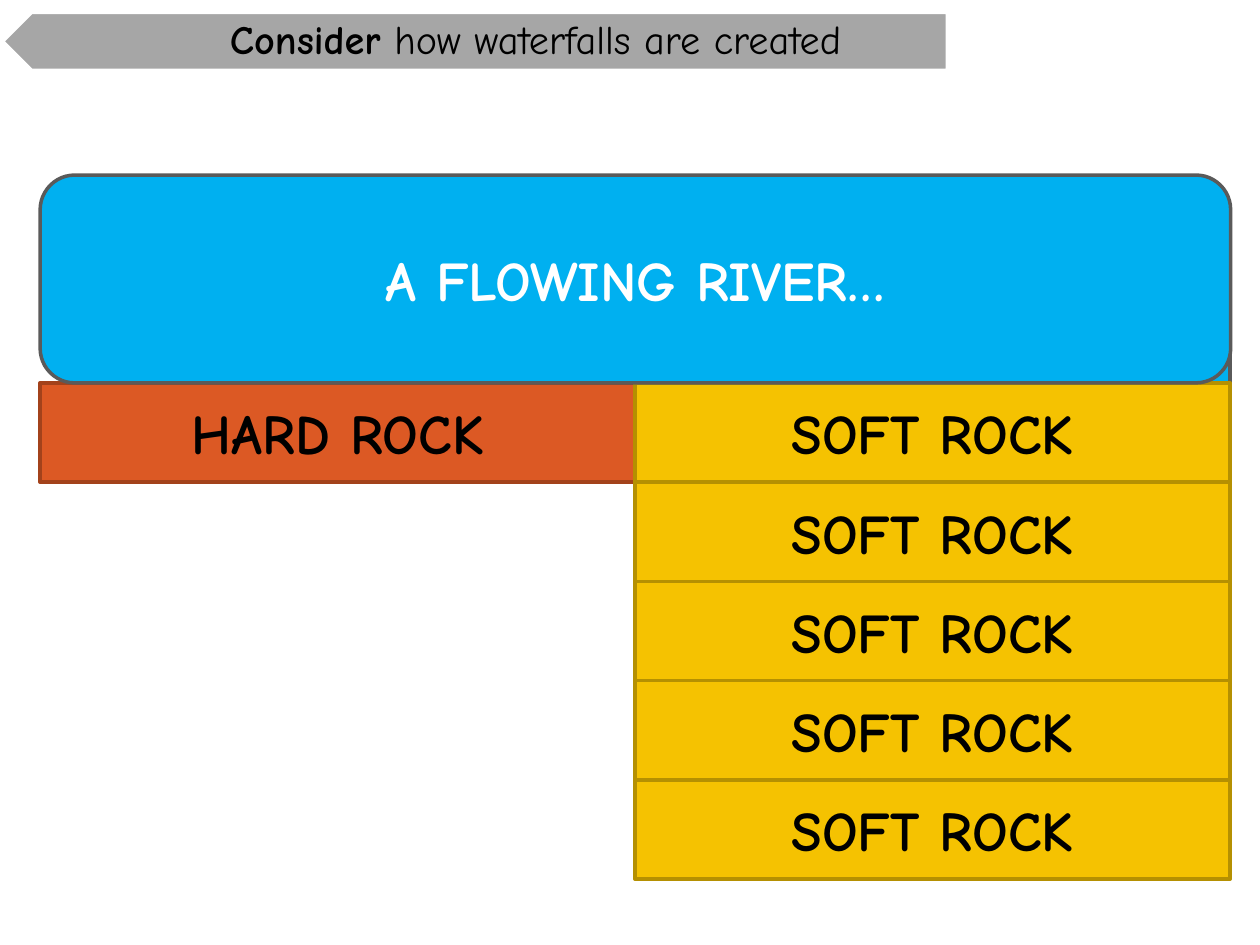
import pptx
import pptx.util
import pptx.dml.color
import pptx.enum.shapes
import pptx.enum.text

Cm = pptx.util.Cm
Pt = pptx.util.Pt
KIND = pptx.enum.shapes.MSO_SHAPE
FONT = "Comic Neue"
HUES = {
    "water": "00B0F0", "edge": "5A5A5A",
    "hard": "DC5924", "hard_edge": "A3421B",
    "soft": "F5C201", "soft_edge": "B59001",
    "band": "A6A6A6", "white": "FFFFFF", "black": "000000",
}
LEFT, MID, TOP = 0.81, 12.8, 7.72
WIDE, HIGH = 12, 2
ROWS = 5


def hue(name):
    """Give the colour that has this name."""
    return pptx.dml.color.RGBColor.from_string(HUES[name])


def add_run(para, text, size, tint, bold):
    """Add one run of text to a paragraph."""
    run = para.add_run()
    run.text = text
    run.font.name = FONT
    run.font.size = Pt(size)
    run.font.bold = bold
    run.font.color.rgb = hue(tint)


def add_block(slide, kind, box, fill, edge, text="", tint="black"):
    """Add a filled, outlined shape with an optional centred label."""
    shape = slide.shapes.add_shape(kind, *map(Cm, box))
    shape.shadow.inherit = False
    shape.fill.solid()
    shape.fill.fore_color.rgb = hue(fill)
    shape.line.color.rgb = hue(edge)
    shape.line.width = Pt(2)
    if text:
        frame = shape.text_frame
        frame.vertical_anchor = pptx.enum.text.MSO_ANCHOR.MIDDLE
        para = frame.paragraphs[0]
        para.alignment = pptx.enum.text.PP_ALIGN.CENTER
        add_run(para, text, 32, tint, True)
    return shape


def add_title(slide):
    """Place the title on its arrow band."""
    band = add_block(slide, KIND.PENTAGON, (0.05, 0.25, 19.05, 1.17),
                     "band", "white")
    band.rotation = 180
    title = slide.shapes.title
    title.left, title.top, title.width, title.height = map(
        Cm, (1.22, 0.25, 17.88, 1.17))
    band.element.addnext(title.element)
    frame = title.text_frame
    frame.word_wrap = True
    frame.auto_size = pptx.enum.text.MSO_AUTO_SIZE.NONE
    frame.vertical_anchor = pptx.enum.text.MSO_ANCHOR.MIDDLE
    frame.margin_left, frame.margin_right = Cm(1.75), Cm(0.46)
    frame.margin_top = frame.margin_bottom = Cm(0.25)
    para = frame.paragraphs[0]
    para.alignment = pptx.enum.text.PP_ALIGN.CENTER
    para.line_spacing = 0.9
    para.space_before = Pt(0)
    add_run(para, "Consider", 23, "black", True)
    add_run(para, " how waterfalls are created", 23, "black", False)


def main():
    """Build the waterfall slide and save it."""
    deck = pptx.Presentation()
    deck.slide_width, deck.slide_height = Cm(25.4), Cm(19.05)
    slide = deck.slides.add_slide(deck.slide_layouts[5])
    add_block(slide, KIND.RECTANGLE, (MID, 7.14, WIDE, 8.61),
              "water", "edge")
    add_block(slide, KIND.RECTANGLE, (LEFT, TOP, WIDE, HIGH),
              "hard", "hard_edge", "HARD ROCK")
    for row in range(ROWS):
        add_block(slide, KIND.RECTANGLE, (MID, TOP + row * HIGH, WIDE, HIGH),
                  "soft", "soft_edge", "SOFT ROCK")
    add_block(slide, KIND.ROUNDED_RECTANGLE, (LEFT, 3.53, 2 * WIDE, 4.19),
              "water", "edge", "A FLOWING RIVER…", "white")
    add_title(slide)
    deck.save("out.pptx")


if __name__ == "__main__":
    main()
